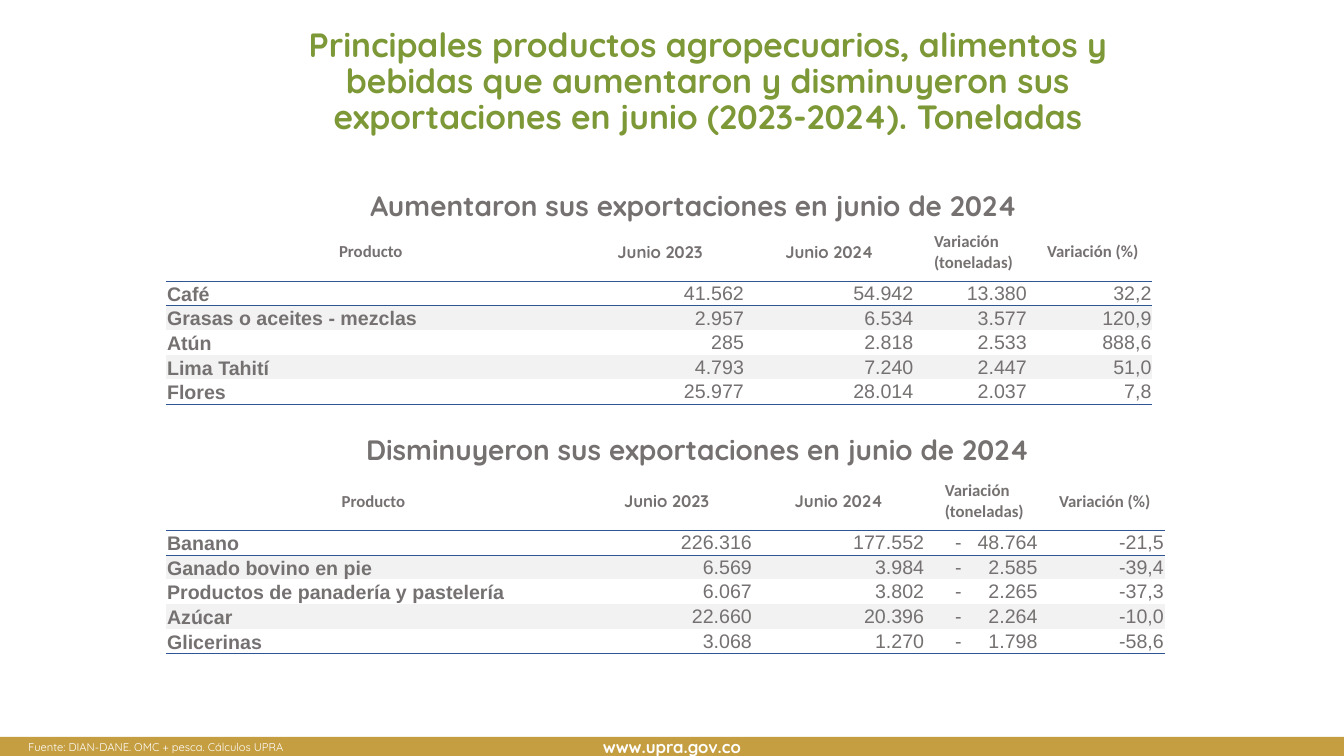
from lxml.etree import SubElement, Element
from pptx import Presentation
from pptx.dml.color import RGBColor
from pptx.enum.shapes import MSO_SHAPE
from pptx.enum.text import MSO_ANCHOR as Anchor, MSO_AUTO_SIZE as AutoSize, PP_ALIGN as Align
from pptx.oxml.ns import qn
from pptx.util import Cm, Pt

NO_GRID_STYLE = "{2D5ABB26-0587-4C30-8999-92F81FD0307C}"
HEADERS = ["Producto", "Junio 2023", "Junio 2024", "Variación (toneladas)", "Variación (%)"]
INCREASES = [
    ["Café", "41.562", "54.942", "13.380", "32,2"],
    ["Grasas o aceites - mezclas", "2.957", "6.534", "3.577", "120,9"],
    ["Atún", "285", "2.818", "2.533", "888,6"],
    ["Lima Tahití", "4.793", "7.240", "2.447", "51,0"],
    ["Flores", "25.977", "28.014", "2.037", "7,8"],
]
DECREASES = [
    ["Banano", "226.316", "177.552", "-\t48.764", "-21,5"],
    ["Ganado bovino en pie", "6.569", "3.984", "-\t2.585", "-39,4"],
    ["Productos de panadería y pastelería", "6.067", "3.802", "-\t2.265", "-37,3"],
    ["Azúcar", "22.660", "20.396", "-\t2.264", "-10,0"],
    ["Glicerinas", "3.068", "1.270", "-\t1.798", "-58,6"],
]


def color(hex_code):
    return RGBColor.from_string(hex_code)


class ExportSlide:
    GREEN, GOLD, WHITE = "7D9837", "C59E41", "FFFFFF"
    GRAY, CELL_GRAY, BAND, RULE = "767171", "757171", "F2F2F2", "2F5597"
    DISPLAY, HEADER, BODY = "Quicksand", "Calibri", "Arial"
    TONNES = 3

    def __init__(self, presentation):
        self.slide = presentation.slides.add_slide(presentation.slide_layouts[5])

    def set_text(self, paragraph, text, size, hex_code, font=DISPLAY, bold=True,
                 align=Align.CENTER):
        paragraph.text = text
        paragraph.alignment = align
        paragraph.font.size = Pt(size)
        paragraph.font.name = font
        paragraph.font.bold = bold
        paragraph.font.color.rgb = color(hex_code)

    def title(self, text, left, top, width, height):
        shape = self.slide.shapes.title
        shape.left, shape.top, shape.width, shape.height = map(Cm, (left, top, width, height))
        frame = shape.text_frame
        frame.word_wrap = True
        frame.auto_size = AutoSize.NONE
        frame.vertical_anchor = Anchor.TOP
        self.set_text(frame.paragraphs[0], text, 24, self.GREEN)
        frame.paragraphs[0].line_spacing = 0.9

    def text(self, text, left, top, width, height, size, hex_code, **style):
        box = self.slide.shapes.add_textbox(Cm(left), Cm(top), Cm(width), Cm(height))
        box.text_frame.word_wrap = True
        self.set_text(box.text_frame.paragraphs[0], text, size, hex_code, **style)

    def band(self, text, left, top, width, height):
        shape = self.slide.shapes.add_shape(
            MSO_SHAPE.RECTANGLE, Cm(left), Cm(top), Cm(width), Cm(height))
        shape.shadow.inherit = False
        shape.fill.solid()
        shape.fill.fore_color.rgb = color(self.GOLD)
        shape.line.fill.background()
        frame = shape.text_frame
        frame.margin_top = frame.margin_bottom = 0
        frame.vertical_anchor = Anchor.MIDDLE
        self.set_text(frame.paragraphs[0], text, 12, self.WHITE)

    def table(self, records, left, top, widths, header_height=1.47, row_height=0.62):
        rows = [HEADERS] + records
        frame = self.slide.shapes.add_table(
            len(rows), len(widths), Cm(left), Cm(top), Cm(sum(widths)),
            Cm(header_height + row_height * len(records)))
        table = frame.table
        table.horz_banding = table.first_row = False
        for style_id in frame._element.iter(qn("a:tableStyleId")):
            style_id.text = NO_GRID_STYLE
        for column, width in zip(table.columns, widths):
            column.width = Cm(width)
        for r, values in enumerate(rows):
            table.rows[r].height = Cm(row_height if r else header_height)
            for c, value in enumerate(values):
                cell = table.cell(r, c)
                self.cell(cell, value, r, c)
                if r in (0, len(records)):
                    self.rule(cell, "a:lnB")
                elif r == 1:
                    self.rule(cell, "a:lnT")

    def cell(self, cell, value, row, column):
        cell.margin_left = cell.margin_right = cell.margin_top = Cm(0.02)
        cell.margin_bottom = 0
        cell.vertical_anchor = Anchor.BOTTOM if row and not column else Anchor.MIDDLE
        if row and row % 2 == 0:
            cell.fill.solid()
            cell.fill.fore_color.rgb = color(self.BAND)
        else:
            cell.fill.background()
        paragraph = cell.text_frame.paragraphs[0]
        if row == 0:
            align = Align.CENTER
            if column == self.TONNES:
                align = Align.LEFT
                cell.margin_left = Cm(0.5)
            font = self.DISPLAY if value.startswith("Junio") else self.HEADER
            self.set_text(paragraph, value, 12, self.GRAY, font, align=align)
            return
        align = Align.RIGHT if column else Align.LEFT
        if column == self.TONNES:
            cell.margin_right = Cm(0.16)
        if "\t" in value:
            align = Align.LEFT
            cell.margin_left, cell.margin_right = Cm(0.76), Cm(0.02)
            self.right_tab(paragraph, 2.08)
        self.set_text(paragraph, value, 14, self.CELL_GRAY, self.BODY, column == 0, align)

    def right_tab(self, paragraph, position):
        stops = SubElement(paragraph._p.get_or_add_pPr(), qn("a:tabLst"))
        SubElement(stops, qn("a:tab"), pos=str(Cm(position)), algn="r")

    def rule(self, cell, side):
        line = Element(qn(side), w=str(Pt(0.25)))
        fill = SubElement(line, qn("a:solidFill"))
        SubElement(fill, qn("a:srgbClr"), val=self.RULE)
        cell._tc.get_or_add_tcPr().insert(0, line)


def main():
    presentation = Presentation()
    presentation.slide_width, presentation.slide_height = Cm(33.87), Cm(19.05)
    page = ExportSlide(presentation)
    page.band("www.upra.gov.co", 0, 18.57, 33.87, 0.48)
    page.title("Principales productos agropecuarios, alimentos y bebidas que aumentaron y "
               "disminuyeron sus exportaciones en junio (2023-2024). Toneladas",
               6.2, 0.58, 23.27, 2.72)
    page.text("Fuente: DIAN-DANE. OMC + pesca. Cálculos UPRA", 0.46, 18.52, 32.79, 0.6,
              8, page.WHITE, bold=False, align=Align.JUSTIFY)
    page.text("Aumentaron sus exportaciones en junio de 2024", 5.41, 4.62, 24.16, 1.11,
              20, page.GRAY)
    page.table(INCREASES, 4.19, 5.61, [10.31, 4.27, 4.27, 3, 3])
    page.text("Disminuyeron sus exportaciones en junio de 2024", 4.52, 10.77, 26.14, 1.11,
              20, page.GRAY)
    page.table(DECREASES, 4.19, 11.89, [10.44, 4.34, 4.34, 3.02, 3.02])
    presentation.save("out.pptx")


if __name__ == "__main__":
    main()
